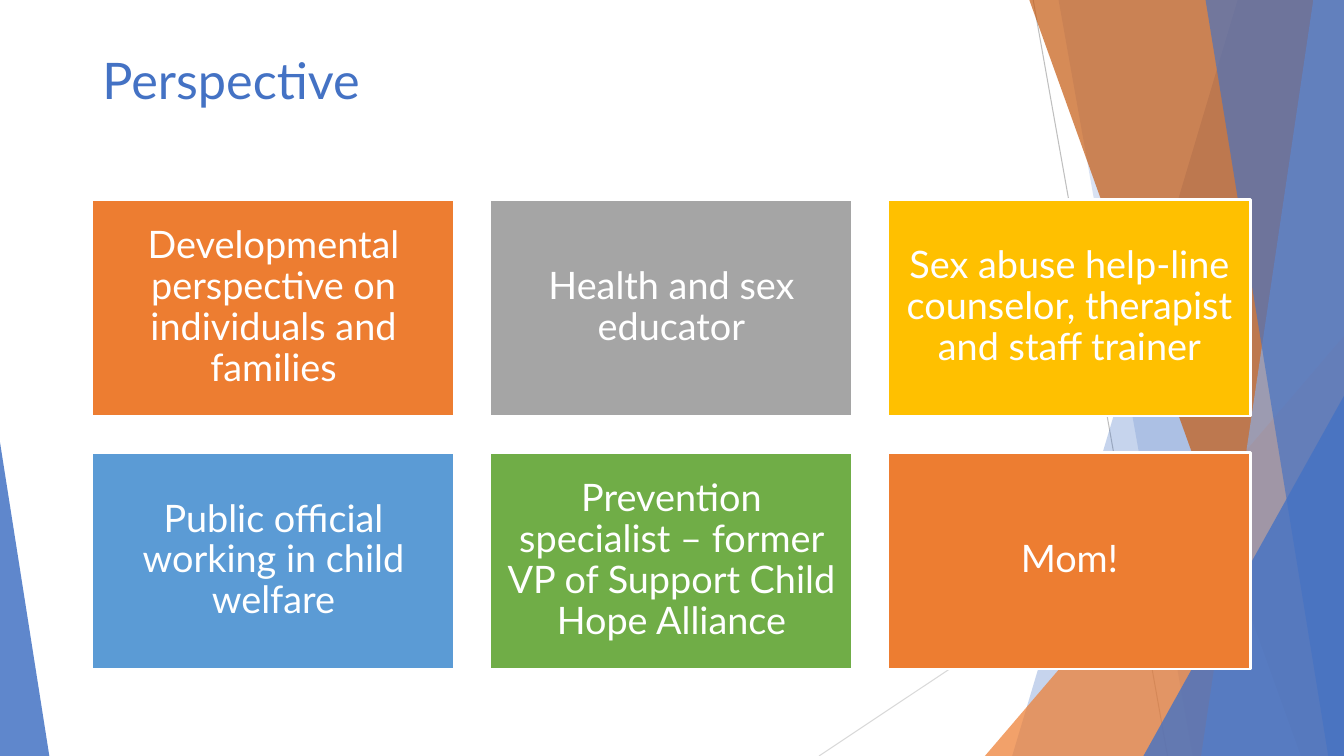
"""Build the Perspective slide: six role cards over a faceted background."""
from lxml import etree
from pptx import Presentation
from pptx.dml.color import RGBColor
from pptx.enum.shapes import MSO_CONNECTOR, MSO_SHAPE
from pptx.enum.text import MSO_ANCHOR, MSO_AUTO_SIZE, PP_ALIGN
from pptx.oxml.ns import qn
from pptx.util import Pt

PX = 9525
WIDTH, HEIGHT = 1280, 720
FONT = "Lato"
STRAIGHT = MSO_CONNECTOR.STRAIGHT
TRIANGLE, RECTANGLE = MSO_SHAPE.ISOSCELES_TRIANGLE, MSO_SHAPE.RECTANGLE
MIDDLE = MSO_ANCHOR.MIDDLE
LEFT, CENTER = PP_ALIGN.LEFT, PP_ALIGN.CENTER
NO_AUTOFIT = MSO_AUTO_SIZE.NONE

WHITE = RGBColor(0xFF, 0xFF, 0xFF)
BLUE = RGBColor(0x44, 0x72, 0xC4)
PALE_BLUE = RGBColor(0x8F, 0xAA, 0xDC)
SKY = RGBColor(0x5B, 0x9B, 0xD5)
ORANGE = RGBColor(0xED, 0x7D, 0x31)
RUST = RGBColor(0xC5, 0x5A, 0x11)
GOLD = RGBColor(0xFF, 0xC0, 0x00)
GREEN = RGBColor(0x70, 0xAD, 0x47)
GRAY = RGBColor(0xA5, 0xA5, 0xA5)
LINE_GRAY = RGBColor(0xBF, 0xBF, 0xBF)
LIGHT_GRAY = RGBColor(0xD9, 0xD9, 0xD9)


def px(*lengths):
    """Turn pixel lengths into EMU."""
    return [length * PX for length in lengths]


def style_text(frame, text, size, color, align):
    """Write one middle-anchored paragraph."""
    frame.text = text
    frame.word_wrap = True
    frame.auto_size = NO_AUTOFIT
    frame.vertical_anchor = MIDDLE
    para = frame.paragraphs[0]
    para.alignment = align
    para.line_spacing = 0.9
    para.font.name = FONT
    para.font.size = Pt(size)
    para.font.color.rgb = color


deck = Presentation()
deck.slide_width, deck.slide_height = px(WIDTH, HEIGHT)
page = deck.slides.add_slide(deck.slide_layouts[5])
shapes = page.shapes

for ends, color in [((984, 0, 1112, 720), LINE_GRAY), ((1280, 387, 780, 720), LIGHT_GRAY)]:
    line = shapes.add_connector(STRAIGHT, *px(*ends))
    line.line.color.rgb = color
    line.line.width = Pt(0.75)
    etree.SubElement(line.element.spPr, qn("a:effectLst"))

# Bands give top and bottom x; triangles give left, top, width, height and apex.
facets = [
    ("band", (1179, 964), BLUE, 30),
    ("band", (1008, 1136), BLUE, 20),
    ("triangle", (938, 320, 342, 400, 1), ORANGE, 72),
    ("band", (980, 1239), RUST, 70),
    ("band", (1251, 1144), PALE_BLUE, 70),
    ("band", (1148, 1265), BLUE, 65),
    ("triangle", (1089, 377, 191, 343, 1), BLUE, 80),
    ("triangle", (0, 421, 47, 299, 0), BLUE, 85),
]
for kind, numbers, color, opacity in facets:
    if kind == "band":
        top_x, bottom_x = numbers
        builder = shapes.build_freeform(top_x, -1, scale=PX)
        builder.add_line_segments([(WIDTH, -1), (WIDTH, HEIGHT), (bottom_x, HEIGHT)])
        facet = builder.convert_to_shape()
    else:
        *box, apex = numbers
        facet = shapes.add_shape(TRIANGLE, *px(*box))
        facet.adjustments[0] = apex
    facet.shadow.inherit = False
    facet.fill.solid()
    facet.fill.fore_color.rgb = color
    facet.line.fill.background()
    fill_color = facet.element.spPr.find(qn("a:solidFill"))[0]
    etree.SubElement(fill_color, qn("a:alpha"), val=str(opacity * 1000))

title = shapes.title
title.left, title.top, title.width, title.height = px(88, 26, 1103, 106)
style_text(title.text_frame, "Perspective", 36, BLUE, LEFT)
shapes.element.append(title.element)

cards = [
    ("Developmental perspective on individuals and families", ORANGE),
    ("Health and sex educator", GRAY),
    ("Sex abuse help-line counselor, therapist and staff trainer", GOLD),
    ("Public official working in child welfare", SKY),
    ("Prevention specialist – former VP of Support Child Hope Alliance", GREEN),
    ("Mom!", ORANGE),
]
for index, (text, color) in enumerate(cards):
    row, column = divmod(index, 3)
    card = shapes.add_shape(RECTANGLE, *px(88 + 379 * column, 190 + 241 * row, 345, 206))
    card.shadow.inherit = False
    card.fill.solid()
    card.fill.fore_color.rgb = color
    card.line.color.rgb = WHITE
    card.line.width = Pt(1.5)
    frame = card.text_frame
    frame.margin_left, frame.margin_top, frame.margin_right, frame.margin_bottom = px(10, 10, 10, 10)
    style_text(frame, text, 27, WHITE, CENTER)

deck.save("out.pptx")
